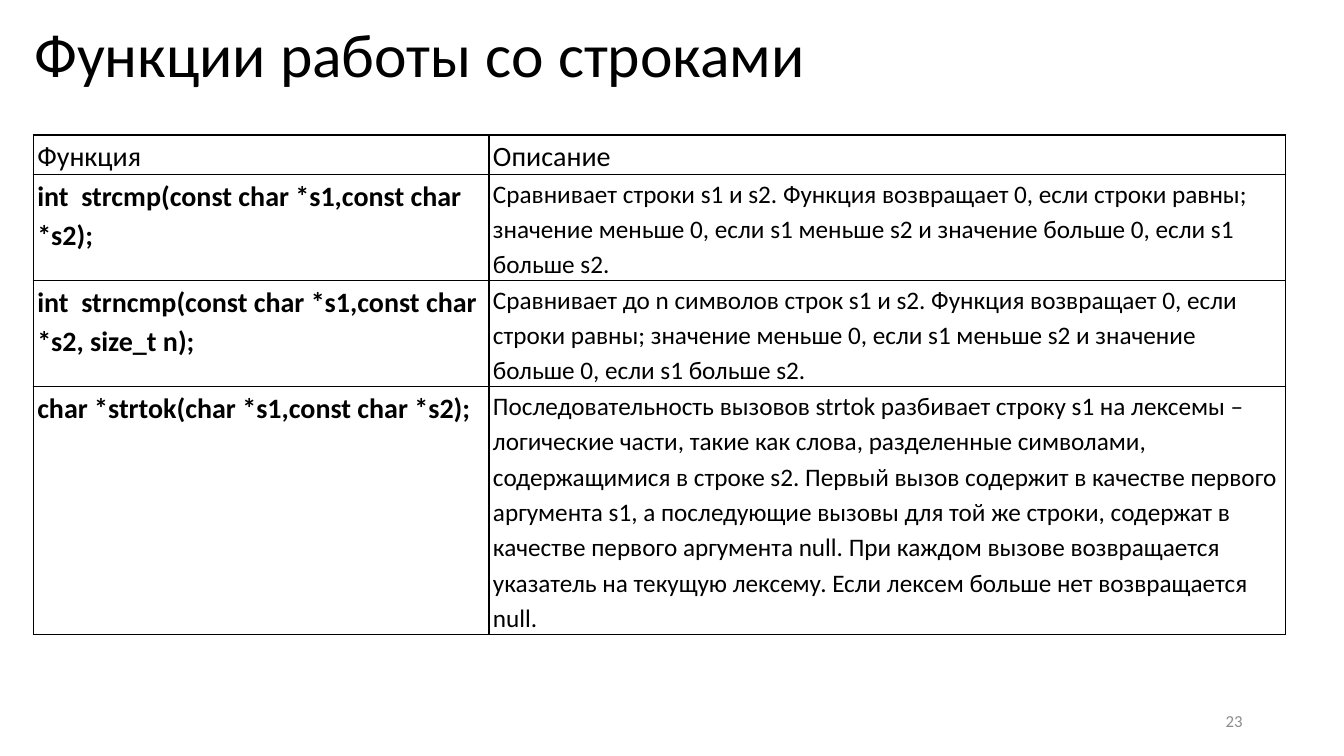
from dataclasses import dataclass

from lxml import etree
from pptx import Presentation, util as u
from pptx.dml.color import RGBColor
from pptx.enum import text as t
from pptx.oxml.ns import qn

WIDE, HIGH = 13.33, 7.5
BLACK = RGBColor(0x00, 0x00, 0x00)
GREY = RGBColor(0x8C, 0x8C, 0x8C)
FONT = "Calibri"
COLS = (4.52, 7.9)
LEFT, TOP = 0.33, 1.34
LINE, BASE = 0.348, 0.39  # heights of a body line and of the head row


@dataclass(frozen=True)
class Style:
    size: int
    bold: bool = False
    color: RGBColor = BLACK


@dataclass(frozen=True)
class Entry:
    name: str
    about: str
    lines: int


@dataclass(frozen=True)
class Label:
    words: str
    box: tuple[float, float, float, float]
    style: Style
    align: t.PP_ALIGN
    foot: float


HEAD = Style(20)
CODE = Style(20, bold=True)
BODY = Style(18)

ENTRIES = (
    Entry("int  strcmp(const char *s1,const char *s2);",
          "Сравнивает строки s1 и s2. Функция возвращает 0, если строки равны; "
          "значение меньше 0, если s1 меньше s2 и значение больше 0, "
          "если s1 больше s2.", 3),
    Entry("int  strncmp(const char *s1,const char *s2, size_t n);",
          "Сравнивает до n символов строк s1 и s2. Функция возвращает 0, "
          "если строки равны; значение меньше 0, если s1 меньше s2 и значение "
          "больше 0, если s1 больше s2.", 3),
    Entry("сhar *strtok(char *s1,const char *s2);",
          "Последовательность вызовов strtok разбивает строку s1 на лексемы – "
          "логические части, такие как слова, разделенные символами, "
          "содержащимися в строке s2. Первый вызов содержит в качестве первого "
          "аргумента s1, а последующие вызовы для той же строки, содержат в "
          "качестве первого аргумента null. При каждом вызове возвращается "
          "указатель на текущую лексему. Если лексем больше нет возвращается "
          "null.", 7),
)

# Boxes are shares of the slide: left, top, width, height.
LABELS = (
    Label("Функции работы со строками", (0.018, 0.013, 0.94, 0.167),
          Style(44), t.PP_ALIGN.LEFT, 0.45),
    Label("23", (0.707, 0.927, 0.225, 0.053),
          Style(12, color=GREY), t.PP_ALIGN.RIGHT, 0.05),
)


def write(par, words: str, style: Style) -> None:
    run = par.add_run()
    run.text = words
    font = run.font
    font.name, font.size, font.bold = FONT, u.Pt(style.size), style.bold
    font.color.rgb = style.color


def frame(cell) -> None:
    """Give the cell a thin black border on all four sides."""
    props = cell._tc.get_or_add_tcPr()
    for spot, side in enumerate(("lnL", "lnR", "lnT", "lnB")):
        line = etree.Element(qn(f"a:{side}"), w=str(u.Pt(1)))
        fill = etree.SubElement(line, qn("a:solidFill"))
        etree.SubElement(fill, qn("a:srgbClr"), val=str(BLACK))
        props.insert(spot, line)


def fill_cell(cell, words: str, style: Style) -> None:
    cell.fill.background()
    cell.margin_left = cell.margin_right = u.Inches(0.04)
    cell.margin_top = cell.margin_bottom = 0
    par = cell.text_frame.paragraphs[0]
    par.line_spacing, par.space_after = 1.15, u.Pt(10)
    write(par, words, style)
    frame(cell)


def draw_table(slide) -> None:
    tall = [BASE] + [LINE * entry.lines for entry in ENTRIES]
    table = slide.shapes.add_table(
        len(tall), len(COLS), u.Inches(LEFT), u.Inches(TOP),
        u.Inches(sum(COLS)), u.Inches(sum(tall))).table
    table.first_row = table.horz_banding = False
    for col, wide in zip(table.columns, COLS):
        col.width = u.Inches(wide)
    for row, high in zip(table.rows, tall):
        row.height = u.Inches(high)
    rows = [(("Функция", HEAD), ("Описание", HEAD))]
    rows += [((entry.name, CODE), (entry.about, BODY)) for entry in ENTRIES]
    for row, pairs in zip(table.rows, rows):
        for cell, (words, style) in zip(row.cells, pairs):
            fill_cell(cell, words, style)


def draw_label(slide, label: Label) -> None:
    box = [u.Inches(share * full)
           for share, full in zip(label.box, (WIDE, HIGH, WIDE, HIGH))]
    body = slide.shapes.add_textbox(*box).text_frame
    body.word_wrap = True
    body.vertical_anchor = t.MSO_ANCHOR.MIDDLE
    body.margin_bottom = u.Inches(label.foot)
    par = body.paragraphs[0]
    par.alignment = label.align
    write(par, label.words, label.style)


def main() -> None:
    deck = Presentation()
    deck.slide_width, deck.slide_height = u.Inches(WIDE), u.Inches(HIGH)
    slide = deck.slides.add_slide(deck.slide_layouts[6])
    draw_table(slide)
    for label in LABELS:
        draw_label(slide, label)
    deck.save("out.pptx")


if __name__ == "__main__":
    main()
